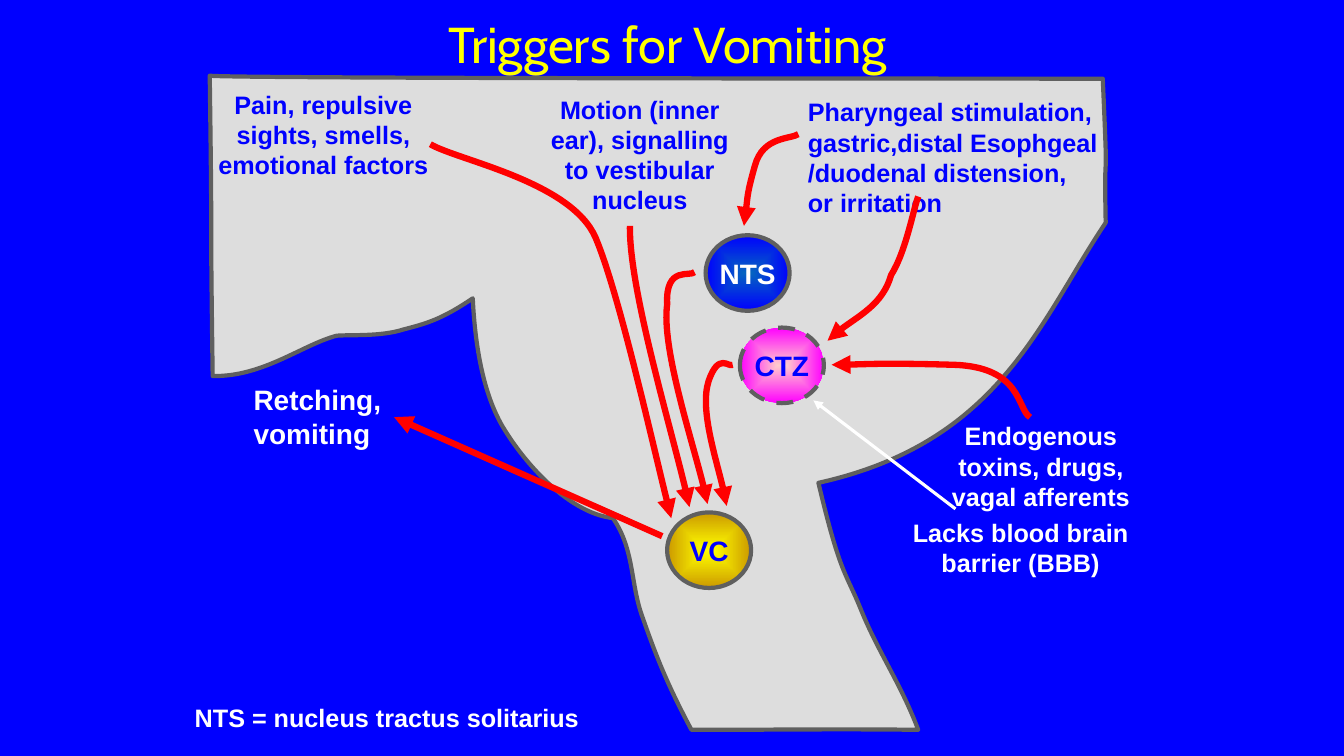
from dataclasses import dataclass

from lxml import etree
from pptx import Presentation
from pptx import util as u
from pptx.dml.color import RGBColor
from pptx.enum import dml, shapes, text
from pptx.oxml import ns

Pt = u.Pt
LEFT, MID = text.PP_ALIGN.LEFT, text.PP_ALIGN.CENTER


@dataclass(frozen=True)
class Theme:
    blue: str = "0000FF"
    white: str = "FFFFFF"
    yellow: str = "FFFF00"
    gold: str = "CC9900"
    rose: str = "FFCCCC"
    pink: str = "FF00FF"
    azure: str = "0563C1"
    red: str = "FF0000"
    skin: str = "DDDDDD"
    edge: str = "5F5F5F"
    font: str = "Arial"
    head: str = "Cabin"
    title: int = 36
    large: int = 20
    small: int = 18
    rim: float = 3
    bold: float = 4.5
    thin: float = 2.25


class Board:
    def __init__(self, slide, theme):
        self.slide, self.theme = slide, theme
        fill = slide.background.fill
        fill.solid()
        fill.fore_color.rgb = RGBColor.from_string(theme.blue)

    def letter(self, frame, words, size, color, align=MID, font=None, bold=True):
        frame.text = words
        para = frame.paragraphs[0]
        para.alignment = align
        face = para.runs[0].font
        face.name, face.size, face.bold = font or self.theme.font, Pt(size), bold
        face.color.rgb = RGBColor.from_string(color)

    def label(self, box, words, size, color, **style):
        frame = self.slide.shapes.add_textbox(*map(Pt, box)).text_frame
        frame.word_wrap = True
        frame.auto_size = text.MSO_AUTO_SIZE.SHAPE_TO_FIT_TEXT
        self.letter(frame, words, size, color, **style)

    def stroke(self, shape, color, width):
        shape.line.color.rgb = RGBColor.from_string(color)
        shape.line.width = Pt(width)

    def tip(self, shape):
        line = shape._element.spPr.find(ns.qn("a:ln"))
        etree.SubElement(line, ns.qn("a:tailEnd"), type="triangle")

    def node(self, left, top, words, color, inner, outer, dash=False):
        shape = self.slide.shapes.add_shape(
            shapes.MSO_SHAPE.OVAL, Pt(left), Pt(top), Pt(60), Pt(54))
        shape.shadow.inherit = False
        shape.fill.gradient()
        for stop, tone in zip(shape.fill.gradient_stops, (inner, outer)):
            stop.color.rgb = RGBColor.from_string(tone)
        grad = shape._element.spPr.find(ns.qn("a:gradFill"))
        grad.remove(grad.find(ns.qn("a:lin")))
        glow = etree.SubElement(grad, ns.qn("a:path"), path="shape")
        sides = dict.fromkeys("ltrb", "50000")
        etree.SubElement(glow, ns.qn("a:fillToRect"), **sides)
        self.stroke(shape, self.theme.edge, self.theme.rim)
        if dash:
            shape.line.dash_style = dml.MSO_LINE.DASH
        frame = shape.text_frame
        frame.margin_left = frame.margin_right = 0
        frame.word_wrap = False
        frame.vertical_anchor = text.MSO_ANCHOR.MIDDLE
        self.letter(frame, words, self.theme.large, color)

    def curve(self, points, close=False):
        spots = [(Pt(x), Pt(y)) for x, y in points]
        maker = self.slide.shapes.build_freeform(*spots[0])
        maker.add_line_segments(spots[1:], close=close)
        shape = maker.convert_to_shape()
        shape.shadow.inherit = False
        steps = list(shape._element.iter(ns.qn("a:lnTo")))
        for i in range(0, len(steps), 3):
            bend = etree.Element(ns.qn("a:cubicBezTo"))
            steps[i].addprevious(bend)
            for step in steps[i:i + 3]:
                bend.append(step[0])
                step.getparent().remove(step)
        return shape

    def area(self, points):
        shape = self.curve(points, close=True)
        shape.fill.solid()
        shape.fill.fore_color.rgb = RGBColor.from_string(self.theme.skin)
        self.stroke(shape, self.theme.edge, self.theme.rim)

    def flow(self, points):
        shape = self.curve(points)
        shape.fill.background()
        self.stroke(shape, self.theme.red, self.theme.bold)
        self.tip(shape)

    def arrow(self, start, end, color, width):
        line = self.slide.shapes.add_connector(
            shapes.MSO_CONNECTOR.STRAIGHT, *map(Pt, start + end))
        self.stroke(line, color, width)
        self.tip(line)
        etree.SubElement(line._element.spPr, ns.qn("a:effectLst"))


BRAIN = [
    (240.5, 239.8),
    (216, 246.2), (187.9, 269.3), (151.9, 268.6),
    (149.8, 117.4), (151.9, 205.9), (149.8, 54),
    (151.2, 56.2), (760.3, 56.2), (787.7, 56.2),
    (792, 152.6), (788.4, 87.8), (789.8, 159.1),
    (742.3, 229.7), (714.2, 316.1), (584.6, 344.9),
    (600.5, 411.8), (604.1, 408.2), (615.6, 437),
    (627.8, 466.6), (643.7, 488.9), (655.9, 521.3),
    (589.7, 520.6), (570.2, 521.3), (493.9, 521.3),
    (476.6, 488.9), (468.7, 468.7), (459.4, 442.1),
    (450, 417.6), (453.6, 393.1), (437.8, 370.1),
    (407.5, 366.5), (377.3, 334.1), (360.7, 307.4),
    (344.2, 281.5), (339.1, 242.6), (337.7, 213.1),
    (315.4, 228.2), (304.6, 231.1), (288, 235.4),
    (272.2, 240.5), (250.6, 239), (240.5, 239.8),
]
FLOWS = [
    [(523.4, 260.6), (520.6, 262.8), (513.4, 251.3), (506.2, 272.2),
     (499.7, 292.3), (516.2, 342.7), (519.1, 361.4)],
    [(496.1, 194.4), (493.2, 198), (475.2, 189.4), (476.6, 217.4),
     (472.3, 247.7), (499.7, 330.5), (505.4, 360)],
    [(450, 161.3), (449.3, 205.9), (483.8, 320.4), (492.5, 362.2)],
    [(307.4, 103), (326.9, 114.5), (408.2, 129.6), (425.5, 169.9),
     (442.1, 209.5), (468.7, 328.3), (479.5, 370.1)],
    [(735.8, 298.1), (726.5, 292.3), (730.1, 262.1), (681.1, 260.6),
     (631.4, 259.2), (612, 260.6), (594, 260.6)],
    [(570.2, 95.8), (565.2, 99.4), (545, 97.2), (539.3, 118.1),
     (533.5, 138.2), (532.8, 151.9), (531.4, 161.3)],
    [(655.9, 140.4), (652.3, 149.8), (647.3, 179.3), (636.5, 196.6),
     (630.7, 217.4), (600.5, 233.3), (591.1, 243.4)],
]


def main():
    deck = Presentation()
    deck.slide_width, deck.slide_height = Pt(960), Pt(540)
    t = Theme()
    board = Board(deck.slides.add_slide(deck.slide_layouts[6]), t)

    board.area(BRAIN)
    board.label((216, 6, 522, 51), "Triggers for Vomiting", t.title, t.yellow,
                font=t.head, bold=False)
    board.node(476.5, 366, "VC", t.blue, t.yellow, t.gold)
    board.node(528.5, 234, "CTZ", t.blue, t.rose, t.pink, dash=True)
    board.node(504, 168, "NTS", t.white, t.azure, t.blue)

    notes = [
        ((377.5, 63.5, 159, 94), "Motion (inner ear), signalling to vestibular nucleus",
         t.small, t.blue, MID),
        ((144, 60, 174, 72), "Pain, repulsive sights, smells, emotional factors",
         t.small, t.blue, MID),
        ((174, 270, 120, 55.5), "Retching, vomiting", t.large, t.white, LEFT),
        ((671.5, 297, 144, 73), "Endogenous toxins, drugs, vagal afferents",
         t.small, t.white, MID),
        ((636, 366, 186, 51), "Lacks blood brain barrier (BBB)", t.small, t.white, MID),
        ((570, 65.5, 222, 94),
         "Pharyngeal stimulation, gastric,distal Esophgeal /duodenal distension, or irritation",
         t.small, t.blue, LEFT),
        ((132, 498, 300, 29), "NTS = nucleus tractus solitarius", t.small, t.white, LEFT),
    ]
    for box, words, size, color, align in notes:
        board.label(box, words, size, color, align=align)

    for points in FLOWS:
        board.flow(points)
    board.arrow((473, 383), (281.5, 298), t.red, t.bold)
    board.arrow((682.5, 363.5), (581, 286), t.white, t.thin)
    deck.save("out.pptx")


if __name__ == "__main__":
    main()
